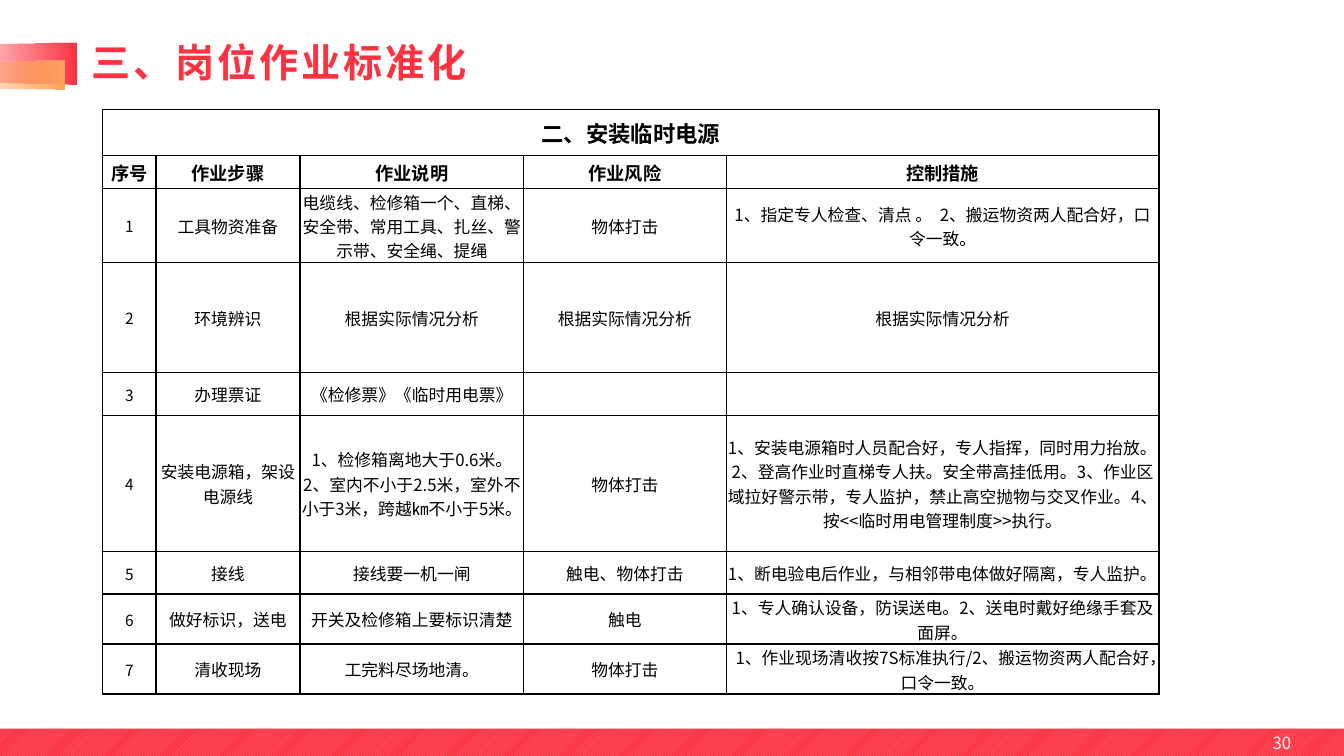
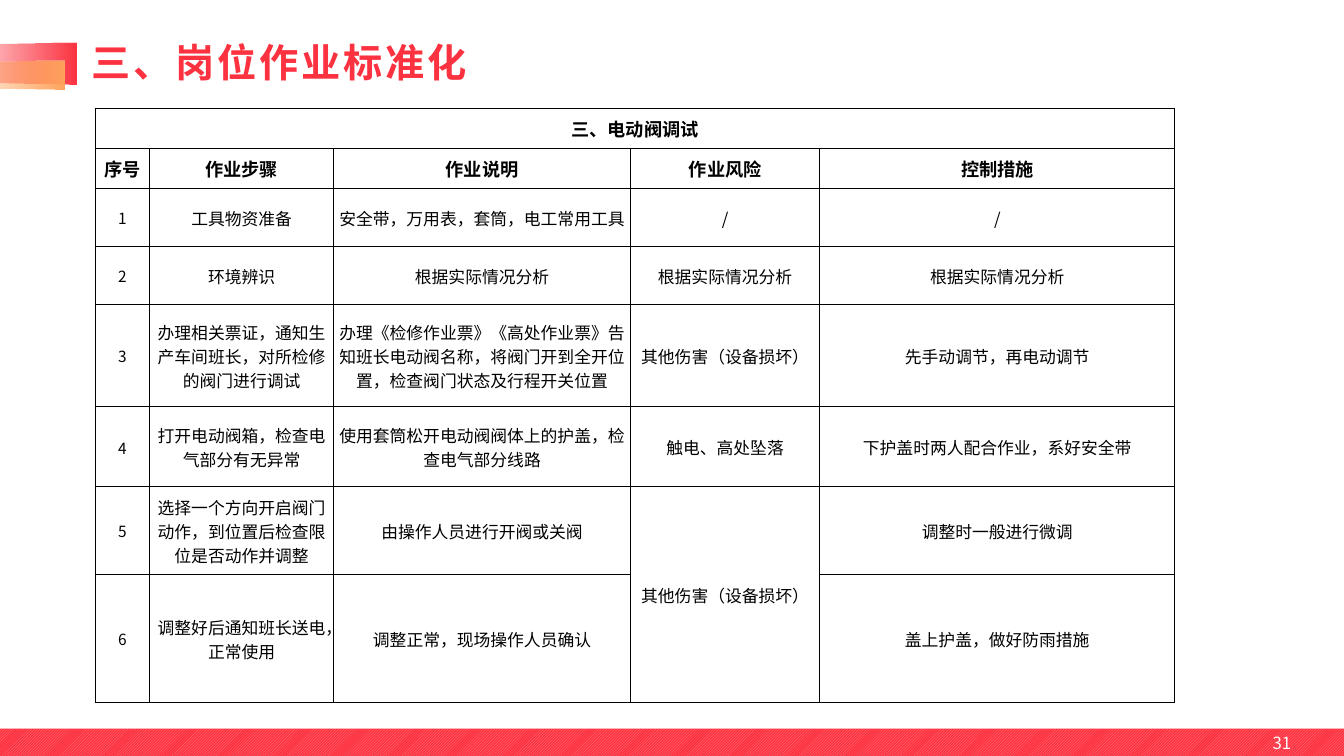
from lxml import etree
from pptx import Presentation
from pptx.dml.color import RGBColor
from pptx.enum.dml import MSO_PATTERN
from pptx.enum.shapes import MSO_SHAPE
from pptx.enum.text import MSO_ANCHOR, MSO_AUTO_SIZE, PP_ALIGN
from pptx.oxml.ns import qn
from pptx.util import Cm, Pt

TRAPEZOID, RECTANGLE = MSO_SHAPE.TRAPEZOID, MSO_SHAPE.RECTANGLE
DIAGONAL = MSO_PATTERN.DARK_UPWARD_DIAGONAL
MIDDLE = MSO_ANCHOR.MIDDLE
LEFT, CENTER, RIGHT = PP_ALIGN.LEFT, PP_ALIGN.CENTER, PP_ALIGN.RIGHT
NO_AUTOSIZE = MSO_AUTO_SIZE.NONE

RED, ORANGE, PINK = "FC3240", "FFA45D", "FD848C"
WHITE, BLACK = "FFFFFF", "000000"
TITLE_FONT, TABLE_FONT = "Noto Sans CJK JP", "Noto Sans CJK SC"
SLIDE_W, SLIDE_H = 33.87, 19.05
SECTION = "三、岗位作业标准化"
HEADINGS = ["序号", "作业步骤", "作业说明", "作业风险", "控制措施"]
ON_SITE = "根据实际情况分析"

POWER_SUPPLY = {
    "page": "30",
    "caption": "二、安装临时电源",
    "caption_size": 16,
    "origin": (2.59, 2.76),
    "widths": [1.34, 3.63, 5.64, 5.1, 10.91],
    "heights": [1.16, 0.83, 1.86, 2.77, 1.08, 3.43, 1.08, 1.26, 1.26],
    "merges": [],
    "steps": [
        ["工具物资准备", "电缆线、检修箱一个、直梯、安全带、常用工具、扎丝、警示带、安全绳、提绳",
         "物体打击", "1、指定专人检查、清点 。  2、搬运物资两人配合好，口令一致。"],
        ["环境辨识", ON_SITE, ON_SITE, ON_SITE],
        ["办理票证", "《检修票》《临时用电票》", "", ""],
        ["安装电源箱，架设电源线",
         "1、检修箱离地大于0.6米。2、室内不小于2.5米，室外不小于3米，跨越㎞不小于5米。",
         "物体打击",
         "1、安装电源箱时人员配合好，专人指挥，同时用力抬放。"
         "2、登高作业时直梯专人扶。安全带高挂低用。"
         "3、作业区域拉好警示带，专人监护，禁止高空抛物与交叉作业。"
         "4、按<<临时用电管理制度>>执行。"],
        ["接线", "接线要一机一闸", "触电、物体打击",
         "1、断电验电后作业，与相邻带电体做好隔离，专人监护。"],
        ["做好标识，送电", "开关及检修箱上要标识清楚", "触电",
         "1、专人确认设备，防误送电。2、送电时戴好绝缘手套及面屏。"],
        ["清收现场", "工完料尽场地清。", "物体打击",
         "1、作业现场清收按7S标准执行/2、搬运物资两人配合好，口令一致。"],
    ],
}

VALVE_TEST = {
    "page": "31",
    "caption": "三、电动阀调试",
    "caption_size": 13,
    "origin": (2.4, 2.73),
    "widths": [1.37, 4.64, 7.48, 4.77, 8.95],
    "heights": [1.01, 1.01, 1.46, 1.46, 2.58, 2.01, 2.22, 3.22],
    "merges": [((6, 3), (7, 3))],
    "steps": [
        ["工具物资准备", "安全带，万用表，套筒，电工常用工具", "/", "/"],
        ["环境辨识", ON_SITE, ON_SITE, ON_SITE],
        ["办理相关票证，通知生产车间班长，对所检修的阀门进行调试",
         "办理《检修作业票》《高处作业票》告知班长电动阀名称，"
         "将阀门开到全开位置，检查阀门状态及行程开关位置",
         "其他伤害（设备损坏）", "先手动调节，再电动调节"],
        ["打开电动阀箱，检查电气部分有无异常",
         "使用套筒松开电动阀阀体上的护盖，检查电气部分线路",
         "触电、高处坠落", "下护盖时两人配合作业，系好安全带"],
        ["选择一个方向开启阀门动作，到位置后检查限位是否动作并调整",
         "由操作人员进行开阀或关阀", "其他伤害（设备损坏）", "调整时一般进行微调"],
        ["调整好后通知班长送电，正常使用", "调整正常，现场操作人员确认",
         "", "盖上护盖，做好防雨措施"],
    ],
}


def color(hex_code):
    """Turn a hex string into a colour."""
    return RGBColor.from_string(hex_code)


def box(left, top, width, height):
    """Turn a box in centimetres into lengths."""
    return Cm(left), Cm(top), Cm(width), Cm(height)


def write(frame, text, size, font_name, hex_code, align, bold=False):
    """Put one formatted paragraph into a text frame and return its run."""
    frame.text = text
    frame.word_wrap = True
    paragraph = frame.paragraphs[0]
    paragraph.alignment = align
    run = paragraph.runs[0]
    run.font.size = Pt(size)
    run.font.bold = bold
    run.font.color.rgb = color(hex_code)
    run.font.name = font_name
    east_asian = etree.SubElement(run.font._element, qn("a:ea"))
    east_asian.set("typeface", font_name)
    return run


def add_ribbon(slide, bounds, hex_code):
    """Draw a trapezoid ribbon that fades out towards the left edge."""
    ribbon = slide.shapes.add_shape(TRAPEZOID, *box(*bounds))
    ribbon.shadow.inherit = False
    ribbon.rotation = 270
    ribbon.adjustments[0] = 0.07
    ribbon.line.fill.background()
    ribbon.fill.gradient()
    ribbon.fill.gradient_angle = 270
    for stop in ribbon.fill.gradient_stops:
        stop.color.rgb = color(hex_code)
    faded = ribbon.element.spPr.find(".//" + qn("a:srgbClr"))
    etree.SubElement(faded, qn("a:alpha")).set("val", "0")


def add_header(slide):
    """Place the ribbons and the section title."""
    add_ribbon(slide, (-0.3, -0.1, 1.04, 3.4), RED)
    add_ribbon(slide, (-0.23, 0.41, 0.74, 2.95), ORANGE)
    title = slide.shapes.title
    title.left, title.top, title.width, title.height = box(2.06, 0.97, 20.22, 1.32)
    frame = title.text_frame
    run = write(frame, SECTION, 28, TITLE_FONT, RED, LEFT, bold=True)
    run.font._element.set("spc", "200")
    frame.paragraphs[0].line_spacing = 0.9
    frame.vertical_anchor = MIDDLE
    frame.auto_size = NO_AUTOSIZE


def add_footer(slide, page):
    """Place the hatched band and the page number."""
    band = slide.shapes.add_shape(RECTANGLE, *box(0, 18.36, SLIDE_W, SLIDE_H - 18.36))
    band.shadow.inherit = False
    band.line.fill.background()
    band.fill.patterned()
    band.fill.pattern = DIAGONAL
    band.fill.fore_color.rgb = color(PINK)
    band.fill.back_color.rgb = color(RED)
    number = slide.shapes.add_textbox(*box(25.17, 18.21, 7.62, 1.02))
    write(number.text_frame, page, 12, TITLE_FONT, WHITE, RIGHT)
    number.text_frame.vertical_anchor = MIDDLE


def frame_cell(cell):
    """Give a cell no fill, thin insets and black borders."""
    cell.fill.background()
    cell.vertical_anchor = MIDDLE
    cell.margin_left = cell.margin_right = cell.margin_top = Cm(0.03)
    cell.margin_bottom = 0
    properties = cell._tc.get_or_add_tcPr()
    for position, side in enumerate(("lnL", "lnR", "lnT", "lnB")):
        border = etree.Element(qn("a:" + side), w=str(Pt(1)))
        paint = etree.SubElement(border, qn("a:solidFill"))
        etree.SubElement(paint, qn("a:srgbClr")).set("val", BLACK)
        properties.insert(position, border)


def add_procedure(slide, procedure):
    """Place the table of work steps, risks and measures."""
    widths, heights = procedure["widths"], procedure["heights"]
    rows = [[procedure["caption"]] + [""] * (len(HEADINGS) - 1), HEADINGS]
    rows += [[str(n), *step] for n, step in enumerate(procedure["steps"], 1)]
    bounds = box(*procedure["origin"], sum(widths), sum(heights))
    table = slide.shapes.add_table(len(rows), len(widths), *bounds).table
    table.first_row = table.horz_banding = False
    for column, width in zip(table.columns, widths):
        column.width = Cm(width)
    for row, height in zip(table.rows, heights):
        row.height = Cm(height)
    for r, texts in enumerate(rows):
        for c, text in enumerate(texts):
            cell = table.cell(r, c)
            frame_cell(cell)
            if text:
                body_size = 11 if c == 0 else 12
                size = (procedure["caption_size"], 13)[r] if r < 2 else body_size
                write(cell.text_frame, text, size, TABLE_FONT, BLACK, CENTER, r < 2)
    for first, last in [((0, 0), (0, len(widths) - 1)), *procedure["merges"]]:
        table.cell(*first).merge(table.cell(*last))


def add_procedure_slide(deck, procedure):
    """Build one slide with header, procedure table and footer."""
    slide = deck.slides.add_slide(deck.slide_layouts[5])
    add_header(slide)
    add_footer(slide, procedure["page"])
    add_procedure(slide, procedure)


def main():
    """Build and save the deck."""
    deck = Presentation()
    deck.slide_width, deck.slide_height = Cm(SLIDE_W), Cm(SLIDE_H)
    for procedure in (POWER_SUPPLY, VALVE_TEST):
        add_procedure_slide(deck, procedure)
    deck.save("out.pptx")


if __name__ == "__main__":
    main()
